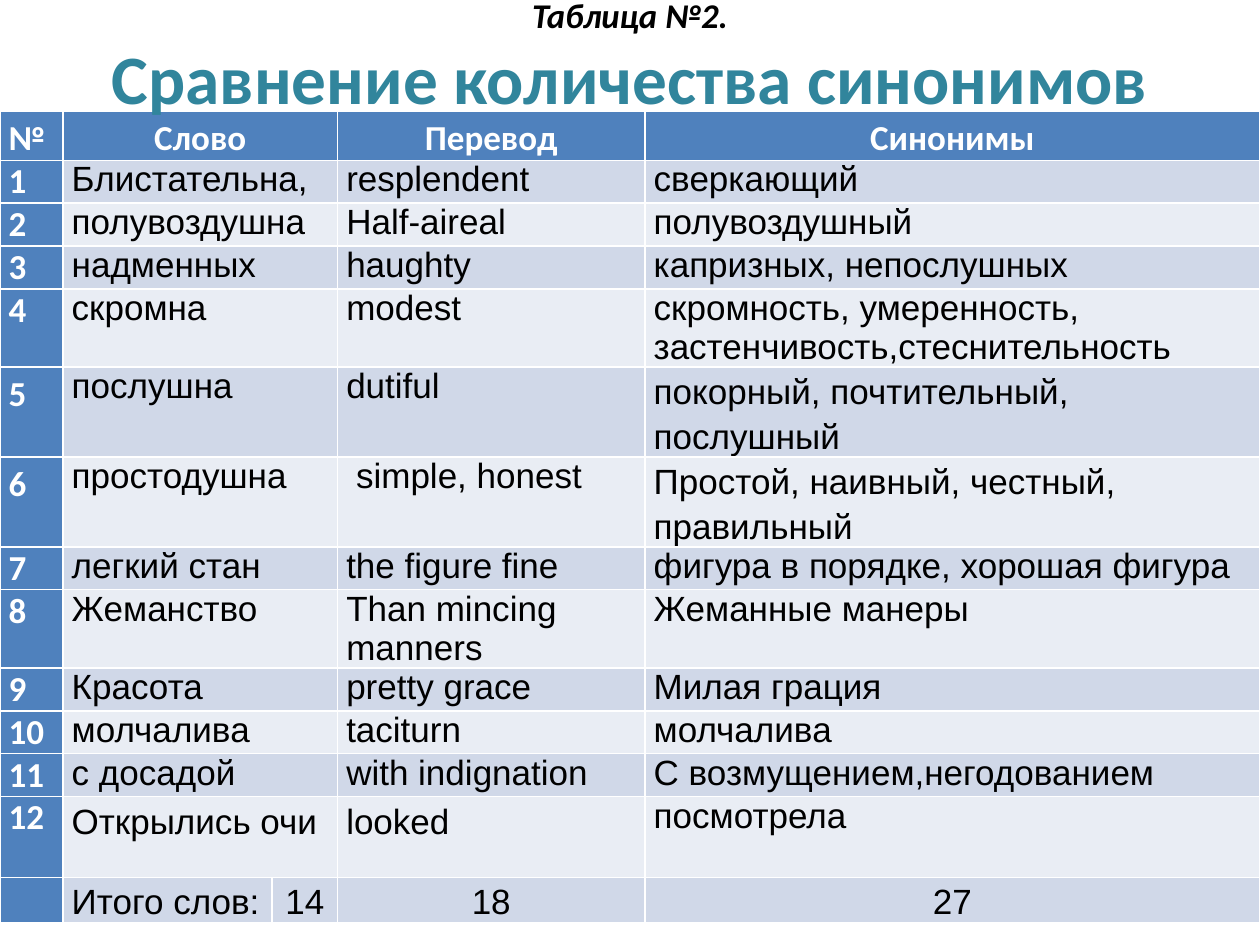
"""Build a slide with a table comparing the number of synonyms."""
from pptx import Presentation
from pptx import util as u
from pptx.dml.color import RGBColor
from pptx.enum import text

CAPTION = "Таблица №2."
TITLE = "Сравнение количества синонимов"
HEADER = ("№", "Слово", "Перевод", "Синонимы")
WORDS = [
    ("Блистательна,", "resplendent", "сверкающий"),
    ("полувоздушна", "Half-aireal", "полувоздушный"),
    ("надменных", "haughty", "капризных, непослушных"),
    ("скромна", "modest", "скромность, умеренность, застенчивость,стеснительность"),
    ("послушна", "dutiful", "покорный, почтительный, послушный"),
    ("простодушна", "simple, honest", "Простой, наивный, честный, правильный"),
    ("легкий стан", "the figure fine", "фигура в порядке, хорошая фигура"),
    ("Жеманство", "Than mincing manners", "Жеманные манеры"),
    ("Красота", "pretty grace", "Милая грация"),
    ("молчалива", "taciturn", "молчалива"),
    ("с досадой", "with indignation", "С возмущением,негодованием"),
    ("Открылись очи", "looked", "посмотрела"),
]
TOTALS = ("", "Итого слов:", "14", "18", "27")
COLUMN_WIDTHS = (36, 119.5, 37.4, 175.7, 351.4)
ROW_HEIGHTS = (22.4, 20.8, 20.8, 20.8, 41.4, 23.2, 22.4, 20.8, 41.4, 20.8, 20.8, 20.8, 46.2, 25.6)
LOOSE_CELLS = {(5, 0), (5, 4), (6, 0), (6, 4), (12, 1), (12, 3)}
INDENTED_CELL = (6, 3)

WHITE = RGBColor(0xFF, 0xFF, 0xFF)
BLACK = RGBColor(0, 0, 0)
BLUE = RGBColor(0x4F, 0x81, 0xBD)
BANDS = (RGBColor(0xE9, 0xED, 0xF4), RGBColor(0xD0, 0xD8, 0xE8))
TEAL = RGBColor(0x31, 0x85, 0x9C)


def set_font(font, name, size, color, bold):
    font.name, font.size, font.bold = name, u.Pt(size), bold
    font.color.rgb = color


def add_title(slide):
    shape = slide.shapes.title
    shape.left, shape.top, shape.width, shape.height = map(u.Pt, (36, 9.4, 648, 45.4))
    shape.text_frame.vertical_anchor = text.MSO_ANCHOR.MIDDLE
    paragraph = shape.text_frame.paragraphs[0]
    paragraph.alignment = text.PP_ALIGN.CENTER
    caption = paragraph.add_run()
    caption.text = CAPTION
    set_font(caption.font, "Calibri", 19.8, BLACK, True)
    caption.font.italic = True
    paragraph.add_line_break()
    heading = paragraph.add_run()
    heading.text = TITLE
    set_font(heading.font, "Calibri", 39.6, TEAL, True)
    shape.element.getparent().append(shape.element)


def fill_cell(cell, row, column, content):
    last = len(ROW_HEIGHTS) - 1
    heading = row == 0 or column == 0
    cell.fill.solid()
    cell.fill.fore_color.rgb = BLUE if heading else BANDS[row % 2]
    cell.margin_left = u.Pt(10.6 if (row, column) == INDENTED_CELL else 5)
    cell.margin_right = u.Pt(5)
    cell.margin_top = cell.margin_bottom = 0
    paragraph = cell.text_frame.paragraphs[0]
    if content:
        paragraph.text = content
    if row in (0, last) or (row, column) in LOOSE_CELLS:
        paragraph.line_spacing = 1.15
    if (row == 0 and column > 0) or (row == last and column > 1):
        paragraph.alignment = text.PP_ALIGN.CENTER
    set_font(paragraph.font, "Calibri" if heading else "Arial", 20,
             WHITE if heading else BLACK, heading)


def add_table(slide):
    body = [(str(number), *words) for number, words in enumerate(WORDS, 1)]
    rows = [(first, word, "", *rest) for first, word, *rest in [HEADER, *body]] + [TOTALS]
    frame = slide.shapes.add_table(len(rows), len(COLUMN_WIDTHS), 0, u.Pt(63.4),
                                   u.Pt(sum(COLUMN_WIDTHS)), u.Pt(sum(ROW_HEIGHTS)))
    table = frame.table
    table.first_col = True
    for column, width in zip(table.columns, COLUMN_WIDTHS):
        column.width = u.Pt(width)
    for row, (contents, height) in enumerate(zip(rows, ROW_HEIGHTS)):
        table.rows[row].height = u.Pt(height)
        for column, content in enumerate(contents):
            fill_cell(table.cell(row, column), row, column, content)
        if row < len(rows) - 1:
            table.cell(row, 1).merge(table.cell(row, 2))


def main():
    presentation = Presentation()
    presentation.slide_width, presentation.slide_height = u.Pt(720), u.Pt(540)
    slide = presentation.slides.add_slide(presentation.slide_layouts[5])
    add_table(slide)
    add_title(slide)
    presentation.save("out.pptx")


if __name__ == "__main__":
    main()
